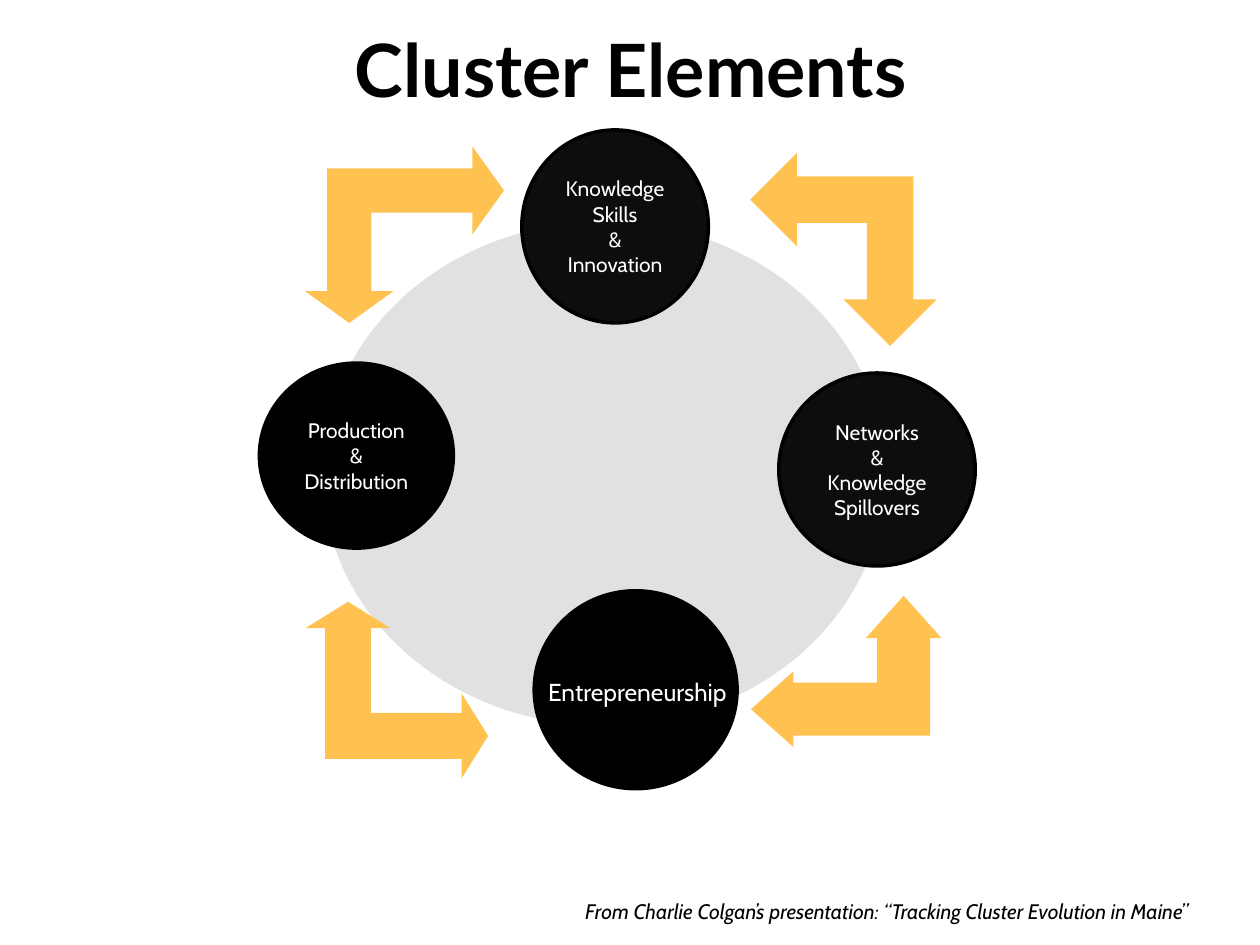
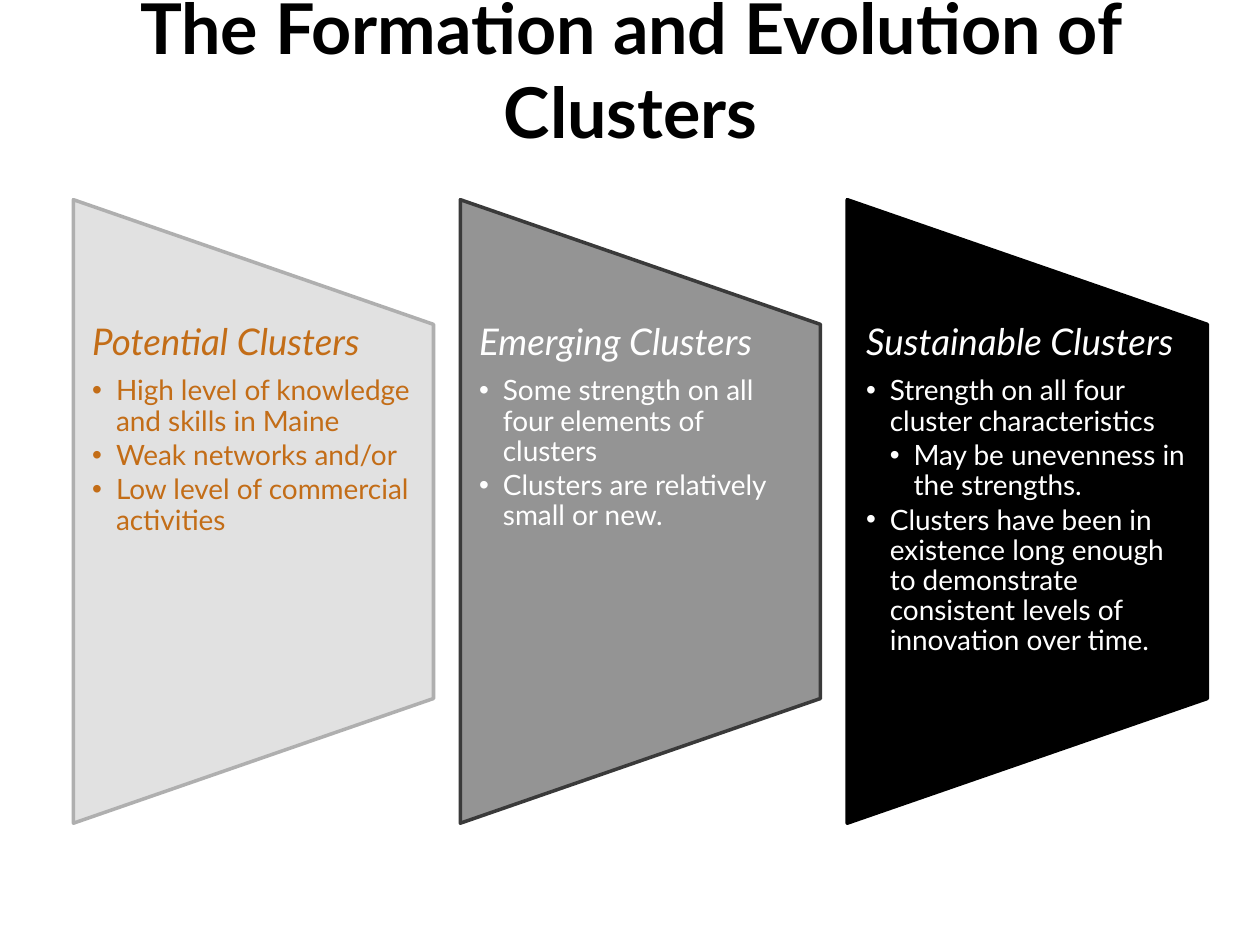
from lxml import etree
from pptx import Presentation
from pptx.dml.color import RGBColor
from pptx.enum.shapes import MSO_SHAPE
from pptx.enum.text import MSO_ANCHOR, PP_ALIGN
from pptx.oxml.ns import qn
from pptx.util import Cm, Pt

BLACK, WHITE, GOLD = "000000", "FFFFFF", "FFC250"
CHARCOAL, PALE, ORANGE = "0D0D0D", "E1E1E1", "C36D17"
LEFT, CENTER = PP_ALIGN.LEFT, PP_ALIGN.CENTER
INDENT = 0.48


def rgb(value):
    return RGBColor.from_string(value)


def add_text(tf, text, size=12, font="Cabin", color=WHITE, bold=False, italic=False,
             align=CENTER, spacing=None, after=0, level=0):
    """Add one paragraph; a level above 0 makes it a bullet."""
    p = tf.paragraphs[0]
    if p.runs:
        p = tf.add_paragraph()
    p.alignment, p.line_spacing, p.space_after = align, spacing, Pt(after)
    r = p.add_run()
    r.text = text
    r.font.size, r.font.name = Pt(size), font
    r.font.bold, r.font.italic = bold, italic
    r.font.color.rgb = rgb(color)
    if level:
        p.level = level
        pPr = p._p.get_or_add_pPr()
        pPr.set("marL", str(Cm(INDENT * level)))
        pPr.set("indent", str(Cm(-INDENT)))
        etree.SubElement(pPr, qn("a:buFont"), typeface="Arial")
        etree.SubElement(pPr, qn("a:buChar"), char="•")


class Deck:
    """Holds the shared style and the current slide."""
    title_box = (0.51, 0.51, 24.41, 1.73)
    line_width = 2

    def __init__(self):
        self.prs = Presentation()
        self.prs.slide_width, self.prs.slide_height = Cm(25.4), Cm(19.05)

    def new_slide(self, title, size):
        self.s = self.prs.slides.add_slide(self.prs.slide_layouts[6])
        tf = self.text_box(self.title_box, inset=(0, 0), anchor=MSO_ANCHOR.MIDDLE)
        add_text(tf, title, size=size, font="Lato", color=BLACK, bold=True)

    def text_box(self, box, inset=(0.25, 0.13), anchor=MSO_ANCHOR.TOP):
        tf = self.s.shapes.add_textbox(*map(Cm, box)).text_frame
        tf.word_wrap, tf.vertical_anchor = True, anchor
        tf.margin_left = tf.margin_right = Cm(inset[0])
        tf.margin_top = tf.margin_bottom = Cm(inset[1])
        return tf

    def shape(self, kind, box, fill, line=None, rotation=0, adjust=()):
        sp = self.s.shapes.add_shape(kind, *map(Cm, box))
        sp.shadow.inherit = False
        sp.rotation = rotation
        sp.fill.solid()
        sp.fill.fore_color.rgb = rgb(fill)
        if line:
            sp.line.color.rgb = rgb(line)
            sp.line.width = Pt(self.line_width)
        else:
            sp.line.fill.background()
        for i, value in enumerate(adjust):
            sp.adjustments[i] = value
        return sp

    def circle(self, box, fill, lines):
        tf = self.shape(MSO_SHAPE.OVAL, box, fill, BLACK).text_frame
        tf.word_wrap, tf.vertical_anchor = True, MSO_ANCHOR.MIDDLE
        for text in lines:
            add_text(tf, text)

    def panel(self, left, fill, line, color, heading, bullets):
        # The trapezoid is turned on its side, so its frame is wide and short
        middle, length, width = 10.31, 12.57, 7.26
        frame = (left + (width - length) / 2, middle - width / 2, length, width)
        self.shape(MSO_SHAPE.FLOWCHART_MANUAL_OPERATION, frame, fill, line, rotation=270)
        tf = self.text_box((left, 6.53, width, 7.54), inset=(0.38, 0))
        style = dict(font="Lato", color=color, align=LEFT, spacing=0.9)
        add_text(tf, heading, size=21, italic=True, after=7.5, **style)
        for level, text in bullets:
            add_text(tf, text, size=16, after=2.4, level=level, **style)


def cluster_elements(deck):
    deck.new_slide("Cluster Elements", 42)

    # Ring and the four elements on it
    deck.shape(MSO_SHAPE.OVAL, (6.5, 4.47, 11.35, 10.16), PALE)
    for box, fill, lines in (
        ((15.7, 7.52, 3.96, 3.89), CHARCOAL, ["Networks", "&", "Knowledge Spillovers"]),
        ((10.77, 11.91, 4.09, 3.99), BLACK, []),
        ((5.23, 7.32, 3.91, 3.73), BLACK, ["Production", "&", "Distribution"]),
        ((10.52, 2.62, 3.76, 3.89), CHARCOAL, ["Knowledge", "Skills", "&", "Innovation"]),
    ):
        deck.circle(box, fill, lines)

    # Corner arrows between neighbouring elements
    for box, rotation, adjust in (
        ((15.06, 3.15, 3.89, 3.76), 270, (0.25, 0.25, 0.25)),
        ((6.22, 12.07, 3.56, 3.68), 90, (0.26, 0.24, 0.15)),
        ((15.14, 12.01, 3.84, 3.05), 0, (0.35, 0.25, 0.28)),
        ((6.15, 2.95, 4.01, 3.56), 180, (0.25, 0.25, 0.18)),
    ):
        deck.shape(MSO_SHAPE.LEFT_UP_ARROW, box, GOLD, rotation=rotation, adjust=adjust)

    # Label wider than its circle, and the source line
    add_text(deck.text_box((10.8, 13.51, 4.34, 0.86)), "Entrepreneurship", size=14, align=LEFT)
    add_text(deck.text_box((10.9, 17.98, 13.97, 0.76)),
             "From Charlie Colgan’s presentation: “Tracking Cluster Evolution in Maine”",
             color=BLACK, italic=True)


def cluster_formation(deck):
    deck.new_slide("The Formation and Evolution of Clusters", 40)

    # Three stages, evenly spaced
    stages = (
        (PALE, "AFAFAF", ORANGE, "Potential Clusters", [
            (1, "High level of knowledge and skills in Maine"),
            (1, "Weak networks and/or"),
            (1, "Low level of commercial activities")]),
        ("949494", "3A3A3A", WHITE, "Emerging Clusters", [
            (1, "Some strength on all four elements of clusters"),
            (1, "Clusters are relatively small or new.")]),
        (BLACK, BLACK, WHITE, "Sustainable Clusters", [
            (1, "Strength on all four cluster characteristics"),
            (2, "May be unevenness in the strengths."),
            (1, "Clusters have been in existence long enough to demonstrate "
                "consistent levels of innovation over time.")]),
    )
    for i, stage in enumerate(stages):
        deck.panel(1.48 + 7.8 * i, *stage)


def main():
    deck = Deck()
    cluster_elements(deck)
    cluster_formation(deck)
    deck.prs.save("out.pptx")


if __name__ == "__main__":
    main()
